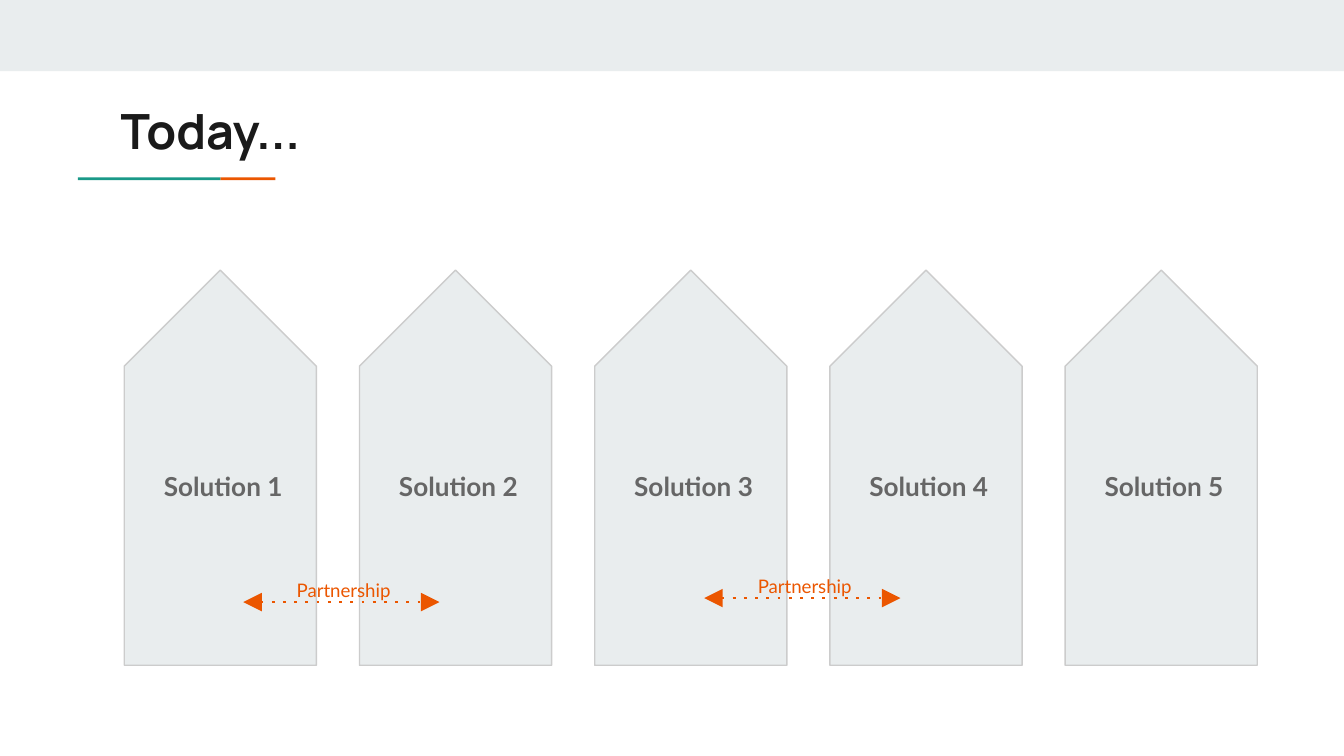
import pptx
import pptx.util
import pptx.dml.color
import pptx.enum.dml
import pptx.enum.shapes
import pptx.enum.text
import pptx.oxml.ns
import lxml.etree

Inches = pptx.util.Inches
SHAPE = pptx.enum.shapes.MSO_SHAPE

# Content
TITLE = "Today..."
SOLUTIONS = ["Solution 1", "Solution 2", "Solution 3", "Solution 4", "Solution 5"]
PARTNERSHIPS = [  # label, arrow left, arrow height on the page
    ("Partnership", 1.81, 4.48),
    ("Partnership", 5.24, 4.45),
]

THEME = {
    "panel": "E9EDEE", "outline": "CCCCCC", "teal": "1A9988", "orange": "EB5600",
    "title": {"name": "Manrope", "size": 26, "bold": True, "color": "1A1A1A"},
    "solution": {"name": "Lato", "size": 14, "bold": True, "color": "666666"},
    "partnership": {"name": "Lato", "size": 10, "bold": False, "color": "EB5600"},
}

# Layout, in inches
PAGE_WIDTH = 10
PAGE_HEIGHT = PAGE_WIDTH * 9 / 16
PLATE_WIDTH, PLATE_HEIGHT, PLATE_TOP = 1.43, 2.94, 2.01
FIRST_CENTER, PITCH = 1.64, 1.75
ARROW_LENGTH = 1.46


def rgb(value):
    return pptx.dml.color.RGBColor.from_string(value)


def add_block(page, kind, left, top, width, height, fill, outline=None):
    block = page.shapes.add_shape(
        kind, Inches(left), Inches(top), Inches(width), Inches(height))
    block.shadow.inherit = False
    block.fill.solid()
    block.fill.fore_color.rgb = rgb(fill)
    if outline:
        block.line.color.rgb = rgb(outline)
        block.line.width = pptx.util.Pt(0.75)
    else:
        block.line.fill.background()
    return block


def add_text(page, text, left, top, width, height, style):
    box = page.shapes.add_textbox(
        Inches(left), Inches(top), Inches(width), Inches(height))
    frame = box.text_frame
    settings = {"word_wrap": True, "vertical_anchor": pptx.enum.text.MSO_ANCHOR.TOP}
    settings.update({f"margin_{side}": Inches(0.1)
                     for side in ("left", "top", "right", "bottom")})
    for name, value in settings.items():
        setattr(frame, name, value)
    span = frame.paragraphs[0].add_run()
    span.text = text
    formats = {"name": style["name"], "size": pptx.util.Pt(style["size"]),
               "bold": style["bold"]}
    for name, value in formats.items():
        setattr(span.font, name, value)
    span.font.color.rgb = rgb(style["color"])


def add_double_arrow(page, left, top, length, color):
    arrow = page.shapes.add_connector(
        pptx.enum.shapes.MSO_CONNECTOR.STRAIGHT,
        Inches(left), Inches(top), Inches(left + length), Inches(top))
    arrow.line.color.rgb = rgb(color)
    arrow.line.width = pptx.util.Pt(1.5)
    arrow.line.dash_style = pptx.enum.dml.MSO_LINE.ROUND_DOT
    line = arrow.line._get_or_add_ln()
    line.find(pptx.oxml.ns.qn("a:prstDash")).set("val", "dot")
    for end in ("a:headEnd", "a:tailEnd"):
        lxml.etree.SubElement(line, pptx.oxml.ns.qn(end),
                              type="triangle", w="lg", len="lg")
    lxml.etree.SubElement(arrow._element.spPr, pptx.oxml.ns.qn("a:effectLst"))


def main():
    deck = pptx.Presentation()
    deck.slide_width, deck.slide_height = Inches(PAGE_WIDTH), Inches(PAGE_HEIGHT)
    page = deck.slides.add_slide(deck.slide_layouts[6])

    # Top band, title and two-colour underline
    add_block(page, SHAPE.RECTANGLE, 0, 0, PAGE_WIDTH, 0.53, THEME["panel"])
    add_block(page, SHAPE.RECTANGLE, 1.64, 1.32, 0.41, 0.02, THEME["orange"])
    add_block(page, SHAPE.RECTANGLE, 0.58, 1.32, 1.06, 0.02, THEME["teal"])
    add_text(page, TITLE, 0.8, 0.65, 2.89, 0.59, THEME["title"])

    # Upright pentagons, drawn lying down and turned about their centres
    for index, label in enumerate(SOLUTIONS):
        center = FIRST_CENTER + index * PITCH
        plate = add_block(
            page, SHAPE.PENTAGON, center - PLATE_HEIGHT / 2,
            PLATE_TOP + (PLATE_HEIGHT - PLATE_WIDTH) / 2,
            PLATE_HEIGHT, PLATE_WIDTH, THEME["panel"], THEME["outline"])
        plate.adjustments[0] = 0.5
        plate.rotation = 270
        add_text(page, label, center - 0.52, 3.4, 1.22, 0.7, THEME["solution"])

    # Partnership arrows with their labels
    for label, left, top in PARTNERSHIPS:
        add_double_arrow(page, left, top, ARROW_LENGTH, THEME["orange"])
        add_text(page, label, left + 0.3, top - 0.26, 1.46, 0.23,
                 THEME["partnership"])

    deck.save("out.pptx")


if __name__ == "__main__":
    main()
